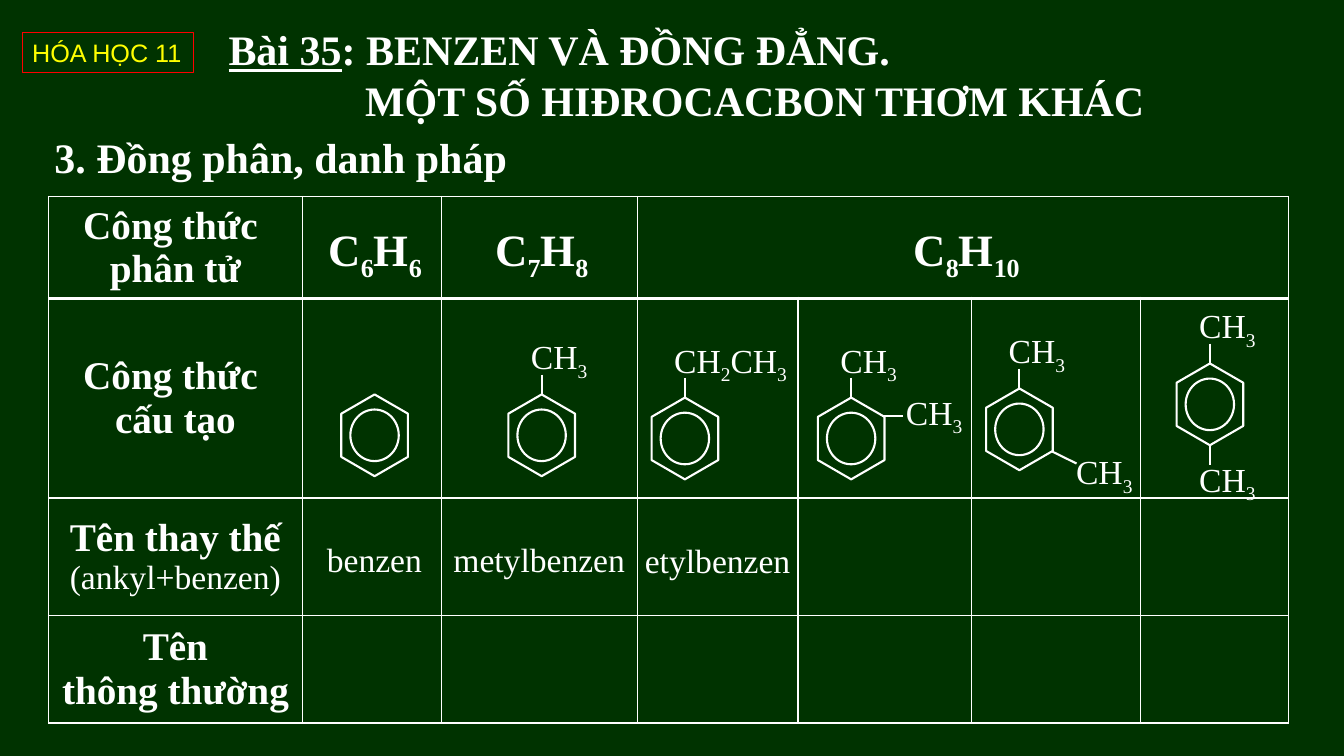
from itertools import groupby

from lxml import etree
from pptx import Presentation
from pptx.dml.color import RGBColor
from pptx.enum.shapes import MSO_CONNECTOR, MSO_SHAPE as SHAPE
from pptx.enum.text import MSO_ANCHOR, MSO_AUTO_SIZE as AUTO, PP_ALIGN as ALIGN
from pptx.oxml import parse_xml
from pptx.oxml.ns import nsdecls, qn
from pptx.util import Cm, Pt

COLORS = {"board": "003300", "chalk": "FFFFFF", "frame": "FF0000", "badge": "FFFF00"}
SERIF = "Times New Roman"

COLUMNS = [6.4, 3.5, 4.95, 4.04, 4.37, 4.27, 3.73]
ROWS = [2.57, 5.03, 2.95, 2.72]
ROW_HEADS = [
    [("Công thức ", 28, True), ("phân tử", 28, True)],
    [("Công thức ", 28, True), ("cấu tạo", 28, True)],
    [("Tên thay thế", 28, True), ("(ankyl+benzen)", 24, False)],
    [("Tên", 28, True), ("thông thường", 28, True)],
]

# Bond start, bond end and label corner, in cm from the ring centre
POSITIONS = {
    "top": ((0, -1.53), (0, -1.02), (-0.52, -2.62)),
    "ortho": ((1.31, -0.56), (0.8, -0.56), (1.13, -1.3)),
    "meta": ((1.44, 0.86), (0.83, 0.56), (1.18, 0.43)),
    "para": ((0, 1.02), (0, 1.52), (-0.52, 1.24)),
}
# Ring centre in cm and its substituents
MOLECULES = [
    (9.44, 10.97, {}),
    (13.65, 10.97, {"top": "CH3"}),
    (17.26, 11.05, {"top": "CH2CH3"}),
    (21.45, 11.05, {"top": "CH3", "ortho": "CH3"}),
    (25.69, 10.82, {"top": "CH3", "meta": "CH3"}),
    (30.49, 10.19, {"top": "CH3", "para": "CH3"}),
]
LABEL_WIDTHS = {"CH3": 1.98, "CH2CH3": 3.45}

# Text, left, top, width in cm
FORMULAS = [("C6H6", 7.32, 5.46, 4.27), ("C7H8", 12.17, 5.46, 2.97),
            ("C8H10", 21.26, 5.46, 6.2)]
NAMES = [("benzen", 7.95, 13.46, 2.97), ("metylbenzen", 11.1, 13.46, 4.98),
         ("etylbenzen", 15.52, 13.49, 5.13)]


def rgb(name):
    return RGBColor.from_string(COLORS[name])


def style(p, size, bold=False, align=ALIGN.LEFT, font=SERIF, color="chalk"):
    p.alignment = align
    p.font.size, p.font.bold, p.font.name = Pt(size), bold, font
    p.font.color.rgb = rgb(color)


def add_box(s, left, top, width, height, wrap=True):
    sp = s.shapes.add_textbox(Cm(left), Cm(top), Cm(width), Cm(height))
    sp.text_frame.word_wrap = wrap
    sp.text_frame.auto_size = AUTO.SHAPE_TO_FIT_TEXT
    return sp


def add_text(s, text, left, top, width, height, size, wrap=True, **look):
    sp = add_box(s, left, top, width, height, wrap)
    p = sp.text_frame.paragraphs[0]
    p.add_run().text = text
    style(p, size, **look)
    return sp


def add_formula(s, formula, left, top, width, height, size, wrap=True, **look):
    """Chemical formula with its digits as subscripts."""
    p = add_box(s, left, top, width, height, wrap).text_frame.paragraphs[0]
    style(p, size, **look)
    for is_digit, chars in groupby(formula, str.isdigit):
        r = p.add_run()
        r.text = "".join(chars)
        if is_digit:
            r.font._element.set("baseline", "-25000")


def add_ring(s, x, y):
    """Benzene ring: an upright hexagon around a circle, centred on x, y."""
    ring = s.shapes.add_group_shape()
    for kind, w, h, turn in ((SHAPE.HEXAGON, 2.06, 1.68, 90), (SHAPE.OVAL, 1.22, 1.3, 0)):
        sp = ring.shapes.add_shape(kind, Cm(x - w / 2), Cm(y - h / 2), Cm(w), Cm(h))
        sp.rotation = turn
        sp.shadow.inherit = False
        sp.fill.background()
        sp.line.color.rgb, sp.line.width = rgb("chalk"), Pt(1.5)
        if kind == SHAPE.HEXAGON:
            sp.adjustments[0] = 0.289


def add_bond(s, x1, y1, x2, y2):
    bond = s.shapes.add_connector(MSO_CONNECTOR.STRAIGHT, Cm(x1), Cm(y1), Cm(x2), Cm(y2))
    bond.line.color.rgb, bond.line.width = rgb("chalk"), Pt(1.5)
    etree.SubElement(bond._element.spPr, qn("a:effectLst"))


def add_molecule(s, x, y, groups):
    add_ring(s, x, y)
    for position, label in groups.items():
        (x1, y1), (x2, y2), (dx, dy) = POSITIONS[position]
        add_bond(s, x + x1, y + y1, x + x2, y + y2)
        add_formula(s, label, x + dx, y + dy, LABEL_WIDTHS[label], 1.27, 24, wrap=False)


def set_borders(cell, top, bottom):
    tc_pr = cell._tc.get_or_add_tcPr()
    for side, width in (("L", 1), ("R", 1), ("T", top), ("B", bottom)):
        tc_pr.append(parse_xml(
            f'<a:ln{side} {nsdecls("a")} w="{Pt(width)}"><a:solidFill>'
            f'<a:srgbClr val="{COLORS["chalk"]}"/></a:solidFill></a:ln{side}>'))


def add_grid(s):
    frame = s.shapes.add_table(len(ROWS), len(COLUMNS), Cm(1.22), Cm(4.95),
                               Cm(sum(COLUMNS)), Cm(sum(ROWS)))
    table = frame.table
    table.first_row = table.horz_banding = False
    for column, width in zip(table.columns, COLUMNS):
        column.width = Cm(width)
    for i, (row, height) in enumerate(zip(table.rows, ROWS)):
        row.height = Cm(height)
        for cell in row.cells:
            set_borders(cell, 3 if i == 1 else 1, 3 if i == 0 else 1)
            cell.fill.background()
            cell.vertical_anchor = MSO_ANCHOR.MIDDLE
        tf = table.cell(i, 0).text_frame
        tf.text = "\n".join(text for text, _, _ in ROW_HEADS[i])
        for p, (_, size, bold) in zip(tf.paragraphs, ROW_HEADS[i]):
            style(p, size, bold, ALIGN.CENTER)
    table.cell(0, 3).merge(table.cell(0, 6))


def add_title(s):
    tf = add_box(s, 5.51, 0.48, 24.36, 2.82).text_frame
    p = tf.paragraphs[0]
    style(p, 30, True)
    r = p.add_run()
    r.text, r.font.underline = "Bài 35", True
    p.add_run().text = ": BENZEN VÀ ĐỒNG ĐẲNG."
    p = tf.add_paragraph()
    style(p, 30, True)
    p.add_run().text = "MỘT SỐ HIĐROCACBON THƠM KHÁC"
    p._p.get_or_add_pPr().set("marL", str(Cm(3.44)))


def add_badge(s):
    sp = add_text(s, "HÓA HỌC 11", 0.56, 0.81, 4.32, 1.02, 18, wrap=False,
                  font="Arial", color="badge")
    sp.line.color.rgb, sp.line.width = rgb("frame"), Pt(0.75)


def main():
    prs = Presentation()
    prs.slide_width, prs.slide_height = Cm(33.87), Cm(19.05)
    s = prs.slides.add_slide(prs.slide_layouts[6])
    s.background.fill.solid()
    s.background.fill.fore_color.rgb = rgb("board")

    add_grid(s)
    for x, y, groups in MOLECULES:
        add_molecule(s, x, y, groups)
    for formula, left, top, width in FORMULAS:
        add_formula(s, formula, left, top, width, 1.63, 32, bold=True, align=ALIGN.CENTER)
    for name, left, top, width in NAMES:
        add_text(s, name, left, top, width, 1.27, 24, align=ALIGN.CENTER)
    add_text(s, "3. Đồng phân, danh pháp", 1.12, 3.18, 23.37, 1.55, 30, bold=True)
    add_title(s)
    add_badge(s)
    prs.save("out.pptx")


if __name__ == "__main__":
    main()
